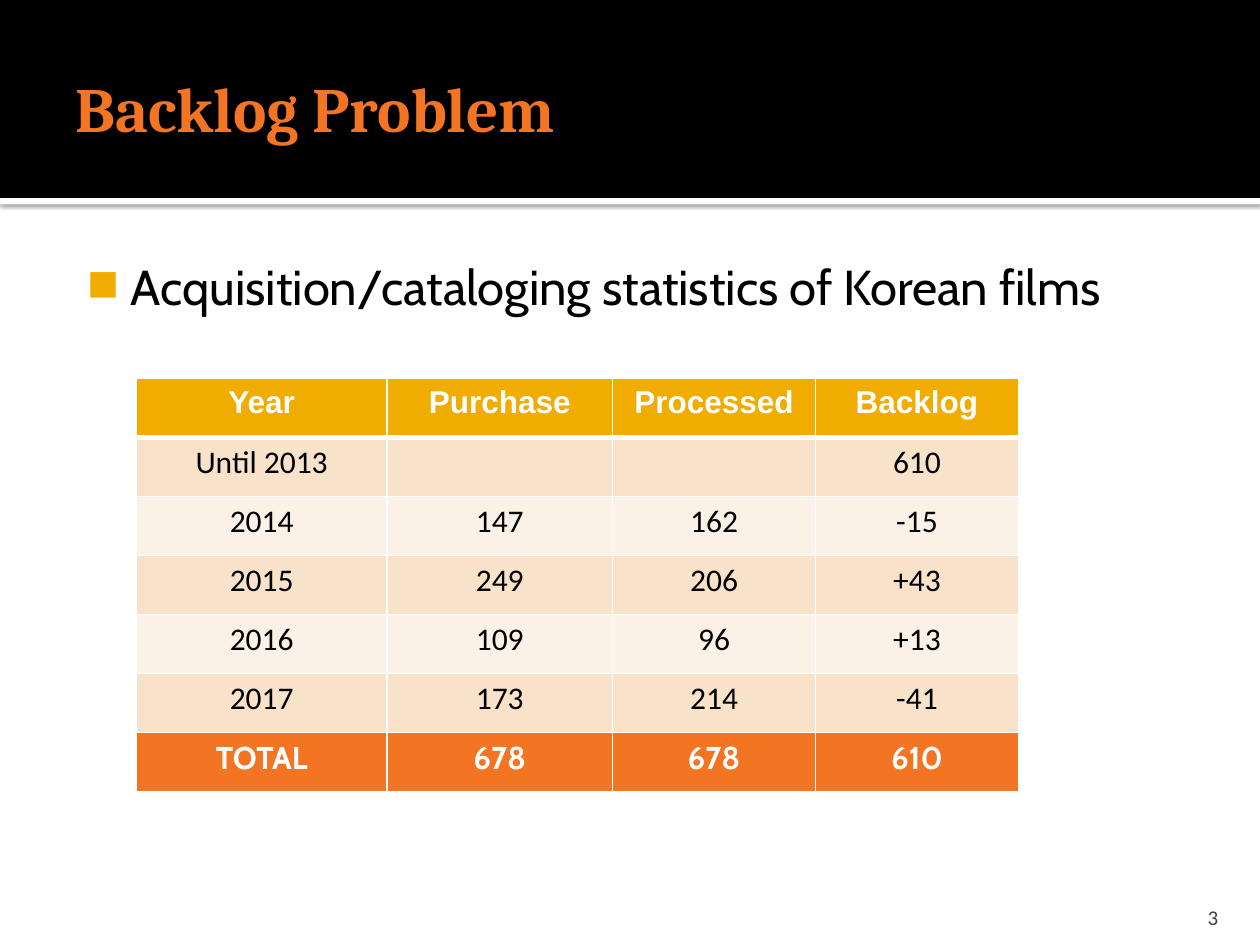
from dataclasses import dataclass
from lxml.etree import SubElement
from pptx import Presentation
from pptx.dml.color import RGBColor
from pptx.enum.shapes import MSO_SHAPE
from pptx.enum.text import MSO_ANCHOR, PP_ALIGN
from pptx.oxml import parse_xml
from pptx.oxml.ns import nsdecls, qn
from pptx.util import Cm, Pt

TITLE = "Backlog Problem"
BULLET = "Acquisition/cataloging statistics of Korean films"
PAGE_NUMBER = "3"
ROWS = [
    ("Year", "Purchase", "Processed", "Backlog"),
    ("Until 2013", "", "", "610"),
    ("2014", "147", "162", "-15"),
    ("2015", "249", "206", "+43"),
    ("2016", "109", "96", "+13"),
    ("2017", "173", "214", "-41"),
    ("TOTAL", "678", "678", "610"),
]
COLUMN_WIDTHS = (5.05, 4.55, 4.09, 4.09)
ROW_HEIGHT = 1.19


@dataclass(frozen=True)
class Theme:
    black: str = "000000"
    white: str = "FFFFFF"
    orange: str = "F37422"
    gold: str = "F0AD00"
    bands: tuple = ("F9E2CA", "FCF1E6")
    grey: str = "414141"
    title_size: int = 36
    body_size: int = 28
    table_size: int = 18
    number_size: int = 12


THEME = Theme()


def style(paragraph, name, size, color, bold=False):
    font = paragraph.font
    font.name, font.size, font.bold = name, Pt(size), bold
    font.color.rgb = RGBColor.from_string(color)


def add_band(page, top, height, color):
    band = page.shapes.add_shape(MSO_SHAPE.RECTANGLE, 0, Cm(top), Cm(25.4), Cm(height))
    band.shadow.inherit = False
    band.fill.solid()
    band.fill.fore_color.rgb = RGBColor.from_string(color)
    band.line.fill.background()
    return band


def add_shadow(band):
    effects = band._element.spPr.find(qn("a:effectLst"))
    shadow = SubElement(effects, qn("a:outerShdw"), blurRad=str(Pt(2.5)),
                        dist=str(Pt(0.8)), dir="5400000", algn="t", rotWithShape="0")
    color = SubElement(shadow, qn("a:srgbClr"), val=THEME.black)
    SubElement(color, qn("a:alpha"), val="60000")


def add_text(page, text, place, insets, anchor):
    box = page.shapes.add_textbox(*map(Cm, place))
    frame = box.text_frame
    frame.word_wrap = True
    frame.vertical_anchor = anchor
    (frame.margin_left, frame.margin_top,
     frame.margin_right, frame.margin_bottom) = map(Cm, insets)
    para = frame.paragraphs[0]
    para.text = text
    return para


def add_bullet(para):
    properties = para._p.get_or_add_pPr()
    properties.set("marL", str(Cm(1.22)))
    properties.set("indent", str(Cm(-0.89)))
    color = SubElement(properties, qn("a:buClr"))
    SubElement(color, qn("a:srgbClr"), val=THEME.gold)
    SubElement(properties, qn("a:buSzPct"), val="80000")
    SubElement(properties, qn("a:buChar"), char="◼")


def set_borders(cell, top, bottom):
    properties = cell._tc.get_or_add_tcPr()
    for index, (side, width) in enumerate(zip("LRTB", (1, 1, top, bottom))):
        properties.insert(index, parse_xml(
            f'<a:ln{side} {nsdecls("a")} w="{Pt(width)}"><a:solidFill>'
            f'<a:srgbClr val="{THEME.white}"/></a:solidFill></a:ln{side}>'))


def row_look(index):
    if index == 0:
        return THEME.gold, "Arial", THEME.white, True
    if index == len(ROWS) - 1:
        return THEME.orange, "Cabin", THEME.white, True
    return THEME.bands[(index - 1) % 2], "Calibri", THEME.black, False


def add_statistics(page):
    table = page.shapes.add_table(
        len(ROWS), len(COLUMN_WIDTHS), Cm(2.75), Cm(7.63),
        Cm(sum(COLUMN_WIDTHS)), Cm(ROW_HEIGHT * len(ROWS))).table
    for column, width in zip(table.columns, COLUMN_WIDTHS):
        column.width = Cm(width)
    for index, values in enumerate(ROWS):
        table.rows[index].height = Cm(ROW_HEIGHT)
        fill, font_name, color, bold = row_look(index)
        for cell, value in zip(table.rows[index].cells, values):
            cell.fill.solid()
            cell.fill.fore_color.rgb = RGBColor.from_string(fill)
            set_borders(cell, 3 if index == 1 else 1, 3 if index == 0 else 1)
            para = cell.text_frame.paragraphs[0]
            para.text = value
            para.alignment = PP_ALIGN.CENTER
            style(para, font_name, THEME.table_size, color, bold)


def main():
    deck = Presentation()
    deck.slide_width, deck.slide_height = Cm(25.4), Cm(19.05)
    page = deck.slides.add_slide(deck.slide_layouts[6])

    add_shadow(add_band(page, 3.99, 0.13, THEME.white))
    add_band(page, 0, 3.99, THEME.black)

    title = add_text(page, TITLE, (1.27, 0.43, 22.86, 3.48),
                     (0.25, 0.13, 0.13, 0.13), MSO_ANCHOR.MIDDLE)
    style(title, "Cambria", THEME.title_size, THEME.orange, True)

    body = add_text(page, BULLET, (1.27, 4.93, 22.86, 12.85),
                    (0.15, 0.25, 0.25, 0.13), MSO_ANCHOR.TOP)
    add_bullet(body)
    style(body, "Cabin", THEME.body_size, THEME.black)

    number = add_text(page, PAGE_NUMBER, (22.78, 17.98, 2.03, 0.76),
                      (0.25, 0.13, 0.25, 0), MSO_ANCHOR.BOTTOM)
    number.alignment = PP_ALIGN.RIGHT
    style(number, "Calibri", THEME.number_size, THEME.grey)

    add_statistics(page)
    deck.save("out.pptx")


if __name__ == "__main__":
    main()
